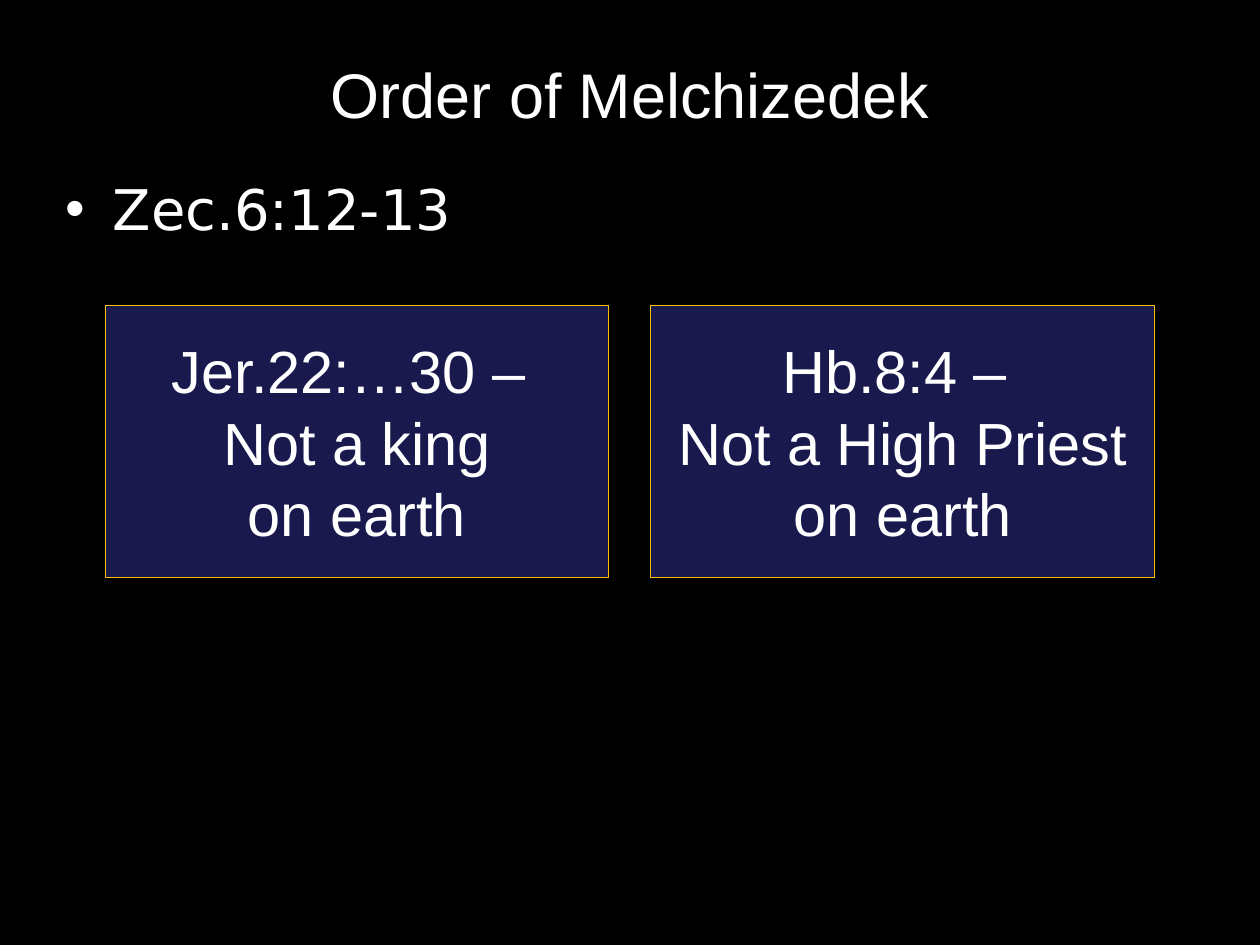
from pptx import Presentation
from pptx import util as u
from pptx.dml.color import RGBColor
from pptx.enum import shapes, text

PX_PER_INCH = 126


def px(length):
    return u.Emu(round(length * 914400 / PX_PER_INCH))


def colour(value):
    return RGBColor.from_string(value)


def write(para, content, font="Arial", size=34, ink="FFFFFF", align=None, after=None):
    para.text = content
    para.alignment = align
    if after is not None:
        para.space_after = u.Pt(after)
    for span in para.runs:
        span.font.name = font
        span.font.size = u.Pt(size)
        span.font.color.rgb = colour(ink)


class Slide:
    """Holds the style and the current page, and adds each kind of element."""

    background = "000000"
    panel_fill = "19194D"
    panel_line = "FFC000"
    centre = text.PP_ALIGN.CENTER
    middle = text.MSO_ANCHOR.MIDDLE

    def __init__(self, deck):
        self.page = deck.slides.add_slide(deck.slide_layouts[1])
        fill = self.page.background.fill
        fill.solid()
        fill.fore_color.rgb = colour(self.background)

    def place(self, box, left, top, width, height):
        box.left, box.top = px(left), px(top)
        box.width, box.height = px(width), px(height)

    def title(self, content, *bounds):
        box = self.page.shapes.title
        self.place(box, *bounds)
        box.text_frame.vertical_anchor = self.middle
        write(box.text_frame.paragraphs[0], content, size=36, align=self.centre)

    def bullets(self, items, *bounds):
        box = self.page.placeholders[1]
        self.place(box, *bounds)
        frame = box.text_frame
        for index, item in enumerate(items):
            para = frame.add_paragraph() if index else frame.paragraphs[0]
            write(para, item, font="DejaVu Sans", size=32, after=12)

    def panel(self, lines, *bounds):
        box = self.page.shapes.add_shape(
            shapes.MSO_SHAPE.RECTANGLE, *(px(length) for length in bounds))
        box.shadow.inherit = False
        box.fill.solid()
        box.fill.fore_color.rgb = colour(self.panel_fill)
        box.line.color.rgb = colour(self.panel_line)
        box.line.width = u.Pt(0.5)
        frame = box.text_frame
        frame.vertical_anchor = self.middle
        for index, line in enumerate(lines):
            para = frame.add_paragraph() if index else frame.paragraphs[0]
            write(para, line, align=self.centre)


def main():
    deck = Presentation()
    deck.slide_width, deck.slide_height = px(1260), px(945)
    slide = Slide(deck)
    slide.title("Order of Melchizedek", 63, 38, 1134, 110)
    slide.bullets(["Zec.6:12-13"], 53, 168, 1155, 693)

    panels = [
        ("Jer.22:…30 – ", "Not a king\von earth"),
        ("Hb.8:4 – ", "Not a High Priest\von earth"),
    ]
    left, width, gap = 105, 504, 42
    for column, lines in enumerate(panels):
        slide.panel(lines, left + column * (width + gap), 305, width, 273)
    deck.save("out.pptx")


if __name__ == "__main__":
    main()
